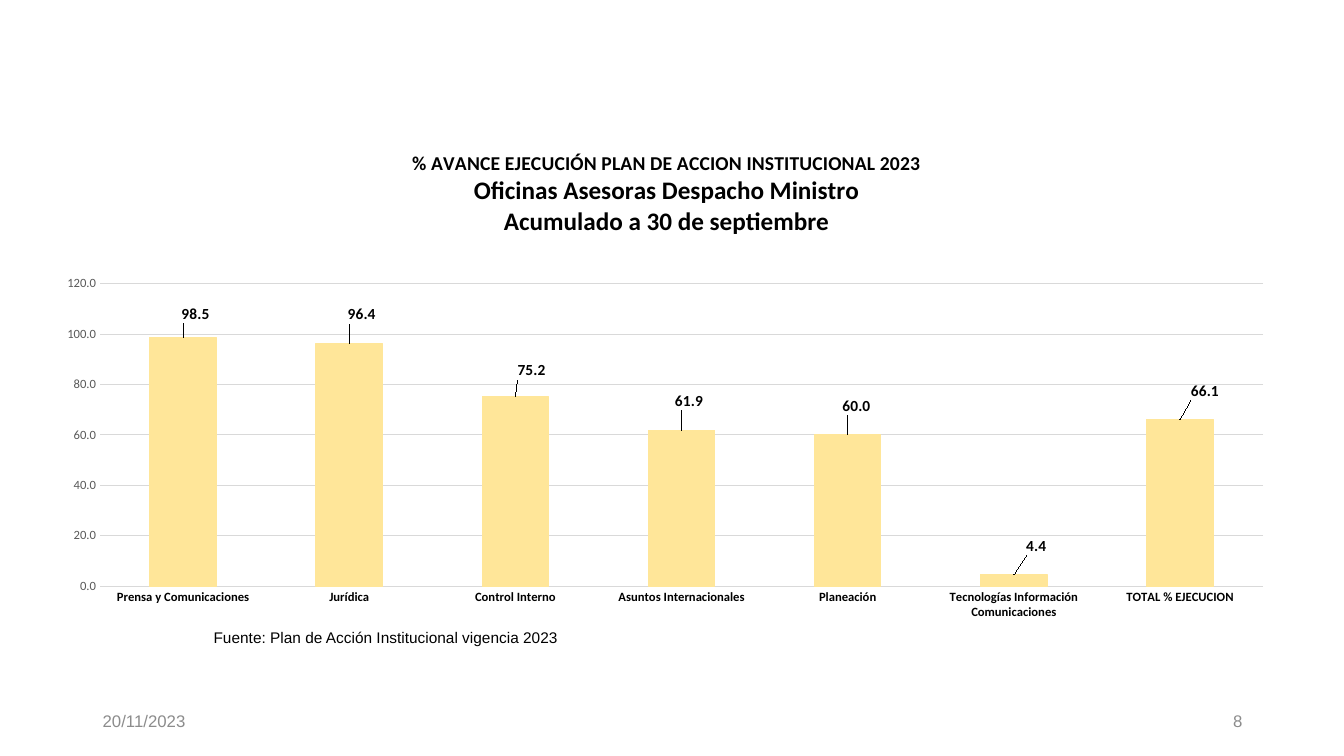
"""Builds the slide on the progress of the 2023 institutional action plan."""
from lxml import etree
from pptx import Presentation
from pptx.chart.data import CategoryChartData
from pptx.dml.color import RGBColor
from pptx.enum.chart import XL_CHART_TYPE as ChartType
from pptx.enum.chart import XL_LABEL_POSITION as LabelPosition
from pptx.enum.chart import XL_TICK_MARK as TickMark
from pptx.enum.text import MSO_ANCHOR as Anchor
from pptx.enum.text import PP_ALIGN as Align
from pptx.oxml.ns import qn
from pptx.util import Inches, Pt

COLORS = {"text": "000000", "footer": "8C8C8C", "axis": "595959", "grid": "D9D9D9", "bar": "FFE699"}
TITLE = [
    ("% AVANCE EJECUCIÓN PLAN DE ACCION INSTITUCIONAL 2023", 14),
    ("Oficinas Asesoras Despacho Ministro", 18),
    ("Acumulado a 30 de septiembre", 18),
]
PROGRESS = [
    ("Prensa y Comunicaciones", 98.5, (0.01, -0.02)),
    ("Jurídica", 96.4, (0.01, -0.03)),
    ("Control Interno", 75.2, (0.013, -0.025)),
    ("Asuntos Internacionales", 61.9, (0.006, -0.03)),
    ("Planeación", 60, (0.007, -0.03)),
    ("Tecnologías Información Comunicaciones", 4.4, (0.018, -0.03)),
    ("TOTAL % EJECUCION", 66.1, (0.02, -0.03)),
]


def style_font(font, size, color="text", bold=False, name="Calibri"):
    font.name, font.size, font.bold = name, Pt(size), bold
    font.color.rgb = RGBColor.from_string(COLORS[color])


def write(paragraph, text, align=Align.LEFT, **style):
    paragraph.alignment = align
    run = paragraph.add_run()
    run.text = text
    style_font(run.font, **style)


def place(parent, index, **settings):
    for old in parent.findall(qn("c:layout")):
        parent.remove(old)
    layout = etree.Element(qn("c:layout"))
    manual = etree.SubElement(layout, qn("c:manualLayout"))
    for tag, value in settings.items():
        etree.SubElement(manual, qn(f"c:{tag}")).set("val", str(value))
    parent.insert(index, layout)


class PlanSlide:
    def __init__(self, deck):
        self.slide = deck.slides.add_slide(deck.slide_layouts[6])

    def text(self, text, left, top, width, height, anchor=Anchor.TOP, **style):
        frame = self.slide.shapes.add_textbox(*map(Inches, (left, top, width, height))).text_frame
        frame.word_wrap = True
        frame.vertical_anchor = anchor
        write(frame.paragraphs[0], text, name="Arial", **style)

    def chart(self, left, top, width, height):
        data = CategoryChartData(number_format="0.0")
        data.categories = [office for office, _, _ in PROGRESS]
        data.add_series("Series 1", [value for _, value, _ in PROGRESS])
        box = map(Inches, (left, top, width, height))
        chart = self.slide.shapes.add_chart(ChartType.COLUMN_CLUSTERED, *box, data).chart
        chart.has_legend = False
        style_font(chart.font, 10)
        self.title(chart)
        self.axes(chart)
        self.bars(chart)
        place(chart.element.find(f".//{qn('c:plotArea')}"), 0, layoutTarget="inner",
              xMode="edge", yMode="edge", x=0.0486, y=0.313, w=0.931, h=0.6)

    def title(self, chart):
        frame = chart.chart_title.text_frame
        for number, (line, size) in enumerate(TITLE):
            paragraph = frame.add_paragraph() if number else frame.paragraphs[0]
            write(paragraph, line, align=Align.CENTER, size=size, bold=True)
        place(chart.element.find(f".//{qn('c:title')}"), 1,
              xMode="edge", yMode="edge", x=0.296, y=0.04)

    def axes(self, chart):
        offices, percent = chart.category_axis, chart.value_axis
        for axis in (offices, percent):
            axis.major_tick_mark = axis.minor_tick_mark = TickMark.NONE
            axis.format.line.fill.background()
        style_font(offices.tick_labels.font, 9, bold=True)
        style_font(percent.tick_labels.font, 9, color="axis")
        percent.minimum_scale, percent.maximum_scale, percent.major_unit = 0, 120, 20
        percent.tick_labels.number_format = "0.0"
        percent.tick_labels.number_format_is_linked = False
        grid = percent.major_gridlines.format.line
        grid.color.rgb = RGBColor.from_string(COLORS["grid"])
        grid.width = Pt(0.75)

    def bars(self, chart):
        plot = chart.plots[0]
        plot.gap_width = 150
        plot.vary_by_categories = False
        series = plot.series[0]
        series.format.fill.solid()
        series.format.fill.fore_color.rgb = RGBColor.from_string(COLORS["bar"])
        series.format.line.color.rgb = RGBColor.from_string(COLORS["bar"])
        series.format.line.width = Pt(0.75)
        labels = series.data_labels
        labels.show_value = True
        labels.number_format = "0.0"
        labels.number_format_is_linked = False
        style_font(labels.font, 11, bold=True)
        for number in range(len(PROGRESS)):
            label = series.points[number].data_label
            style_font(label.font, 11, bold=True)
            label.position = LabelPosition.OUTSIDE_END
        for (_, _, (x, y)), label in zip(PROGRESS, chart.element.iter(qn("c:dLbl"))):
            place(label, 1, x=x, y=y)


def main():
    deck = Presentation()
    deck.slide_width, deck.slide_height = Inches(13.33), Inches(7.5)
    slide = PlanSlide(deck)
    footer = {"anchor": Anchor.MIDDLE, "size": 12, "color": "footer"}
    slide.text("20/11/2023", 0.92, 6.95, 3, 0.4, **footer)
    slide.text("8", 9.42, 6.95, 3, 0.4, align=Align.RIGHT, **footer)
    slide.text("Fuente: Plan de Acción Institucional vigencia 2023", 2.02, 6.18, 6.65, 0.29, size=11)
    slide.chart(0.39, 1.25, 12.39, 5)
    deck.save("out.pptx")


if __name__ == "__main__":
    main()
